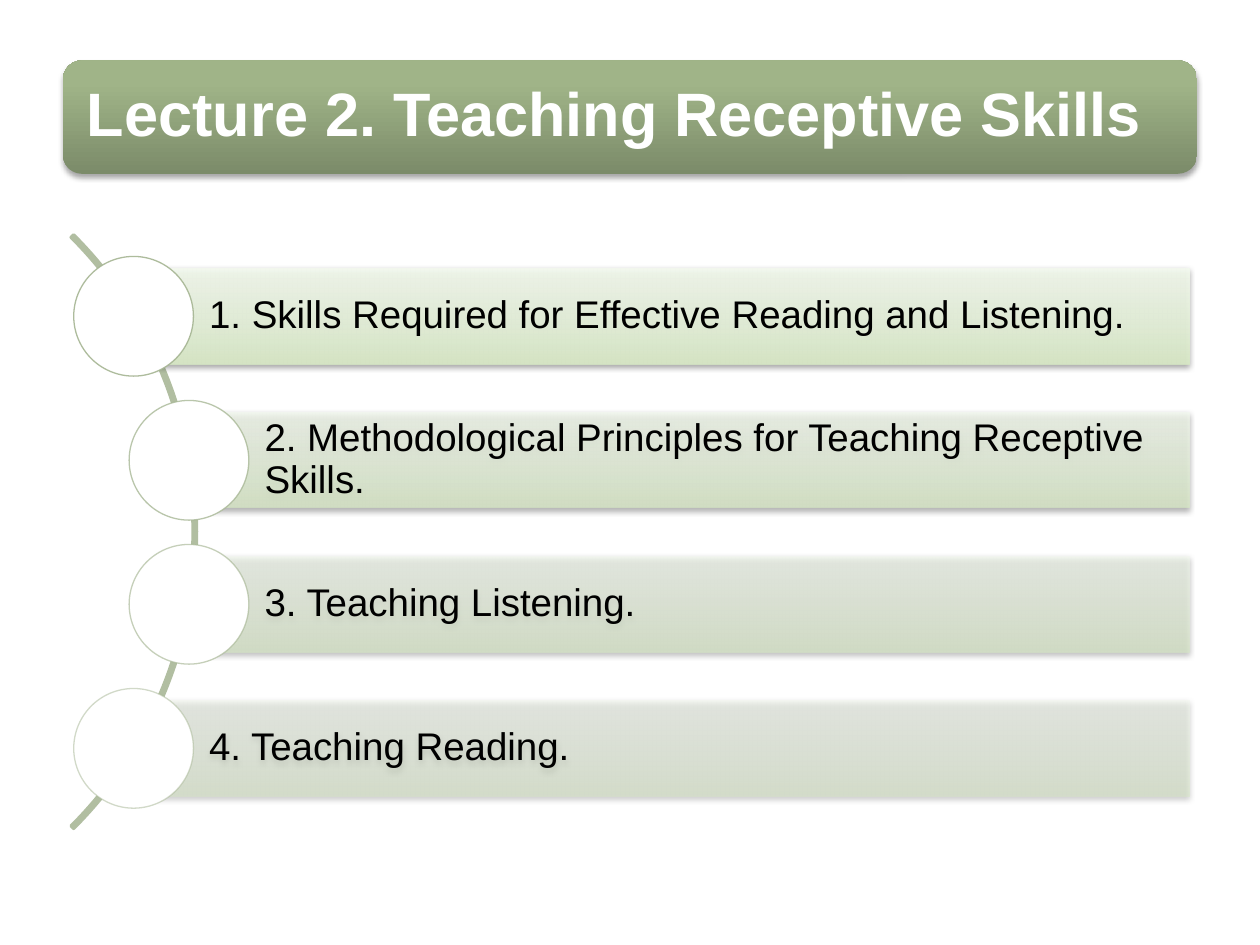
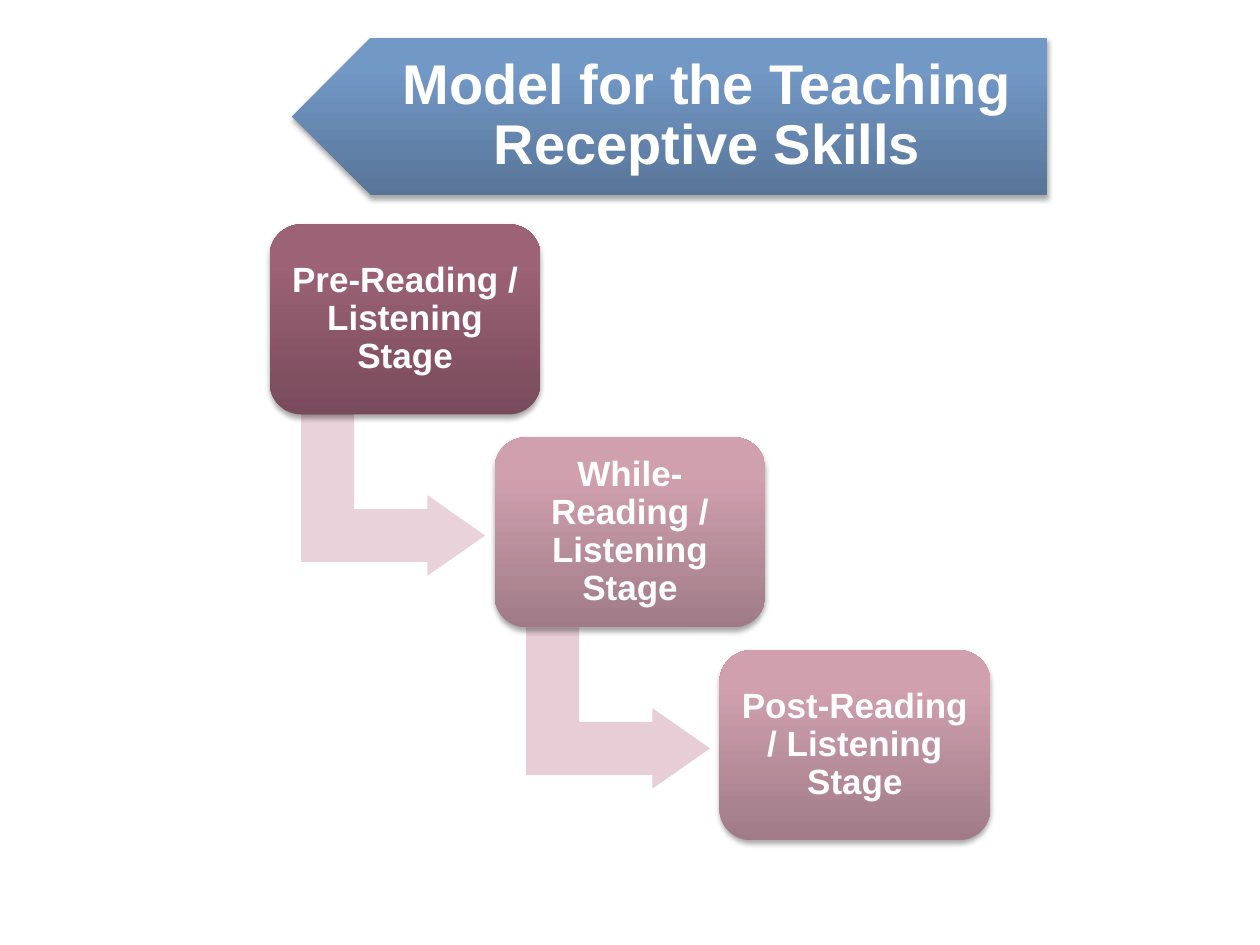
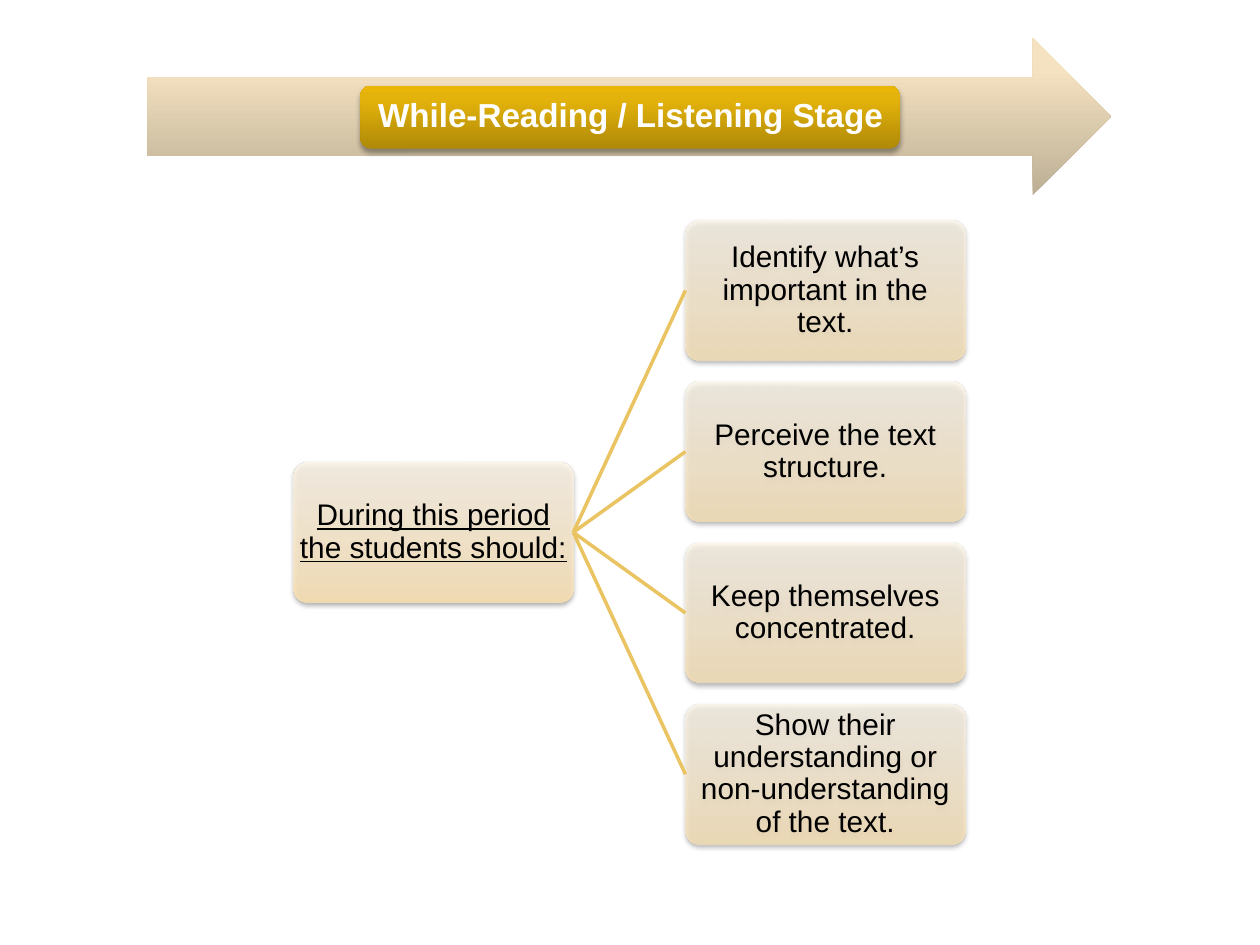
import lxml.etree
import pptx
import pptx.dml.color
import pptx.enum.shapes
import pptx.enum.text
import pptx.oxml
import pptx.oxml.ns
import pptx.util

Inches, Pt = pptx.util.Inches, pptx.util.Pt
RGB = pptx.dml.color.RGBColor.from_string
SHAPE = pptx.enum.shapes.MSO_SHAPE
ALIGN = pptx.enum.text.PP_ALIGN
TITLE_ONLY = 5


class Theme:
    font = "Arial"
    white, black = "FFFFFF", "000000"
    # Gradients run from bottom to top
    green = [(0, "7B8B69"), (80, "A0B488"), (100, "A1B688")]
    blue = [(0, "587598"), (80, "7298C6"), (100, "7199C8")]
    plum = [(0, "784B5B"), (80, "9C6276"), (100, "9E6176")]
    pink = [(0, "A07B87"), (80, "D0A0AF"), (100, "D2A0B0")]
    sand = [(0, "BCAE94"), (80, "F4E2C1"), (100, "F6E3C1")]
    gold = [(0, "B08A08"), (80, "E4B30B"), (100, "E9B607")]
    leaf = [(0, "D9EAC6"), (35, "E3F0D6"), (100, "F4FAEF")]
    cream = [(0, "FFE4B2"), (35, "FFECC9"), (100, "FFF7EA")]
    arc, ring, link = "B1BEA1", "A5B592", "EAC463"
    bends = ["E9D2D9", "E7CDD5"]
    # Shadow strength in percent, distance in points
    deep, soft = (35, 1.8), (38, 1.6)
    # Text styles
    head = {"size": Pt(35), "bold": True}
    model = {"size": Pt(32), "bold": True}
    label = {"size": Pt(19), "bold": True}
    stage = {"size": Pt(20), "bold": True}
    topic = {"size": Pt(22)}
    card = {"size": Pt(17)}
    lead = {"size": Pt(17), "underline": True}


def paint(shape, stops, shade=None, alpha=100):
    """Give a shape an upward gradient, no outline and an optional shadow."""
    space = pptx.oxml.ns.nsdecls("a")
    marks = "".join(
        f'<a:gs pos="{pos * 1000}"><a:srgbClr val="{tone}">'
        f'<a:alpha val="{alpha * 1000}"/></a:srgbClr></a:gs>'
        for pos, tone in stops)
    shape.shadow.inherit = False
    shape.line.fill.background()
    props = shape.element.spPr
    line = props.find(pptx.oxml.ns.qn("a:ln"))
    line.addprevious(pptx.oxml.parse_xml(
        f'<a:gradFill {space} rotWithShape="1"><a:gsLst>{marks}</a:gsLst>'
        '<a:lin ang="16200000" scaled="0"/></a:gradFill>'))
    if shade:
        power, gap = shade
        glow = props.find(pptx.oxml.ns.qn("a:effectLst"))
        glow.append(pptx.oxml.parse_xml(
            f'<a:outerShdw {space} blurRad="{Pt(3.1)}" dist="{Pt(gap)}" '
            'dir="5400000" rotWithShape="0"><a:srgbClr val="000000">'
            f'<a:alpha val="{power * 1000}"/></a:srgbClr></a:outerShdw>'))


def write(shape, text, look, tone, pads, align=ALIGN.CENTER):
    """Set one middle-anchored paragraph; pads are left, top, right, bottom."""
    frame = shape.text_frame
    frame.text = text
    sides = ("margin_left", "margin_top", "margin_right", "margin_bottom")
    form = dict(zip(sides, map(Inches, pads)), word_wrap=True,
                auto_size=pptx.enum.text.MSO_AUTO_SIZE.NONE,
                vertical_anchor=pptx.enum.text.MSO_ANCHOR.MIDDLE)
    para = frame.paragraphs[0]
    font = para.runs[0].font
    font.color.rgb = RGB(tone)
    for part, values in ((frame, form),
                         (para, {"alignment": align, "line_spacing": 0.9}),
                         (font, {"name": Theme.font, **look})):
        for key, value in values.items():
            setattr(part, key, value)


deck = pptx.Presentation()
deck.slide_width, deck.slide_height = Inches(10), Inches(7.5)

# Title banners: outline, box, gradient, shadow; then title text and its box
banners = [
    ([(SHAPE.ROUNDED_RECTANGLE, (0.5, 0.48, 9, 0.9), Theme.green, Theme.deep)],
     "Lecture 2. Teaching Receptive Skills", (0.54, 0.52, 8.91, 0.81),
     Theme.head, (0.15,) * 4, ALIGN.LEFT),
    ([(SHAPE.PENTAGON, (2.32, 0.3, 5.99, 1.25), Theme.blue, Theme.deep)],
     "Model for the Teaching Receptive Skills", (2.63, 0.3, 5.67, 1.25),
     Theme.model, (0.55, 0.13, 0.25, 0.13), ALIGN.CENTER),
    ([(SHAPE.RIGHT_ARROW, (1.17, 0.3, 7.65, 1.25), Theme.sand, None),
      (SHAPE.ROUNDED_RECTANGLE, (2.86, 0.68, 4.28, 0.5), Theme.gold, Theme.deep)],
     "While-Reading / Listening Stage", (2.89, 0.7, 4.23, 0.45),
     Theme.label, (0.08,) * 4, ALIGN.CENTER),
]
pages = []
for parts, text, box, look, pads, align in banners:
    slide = deck.slides.add_slide(deck.slide_layouts[TITLE_ONLY])
    for kind, area, stops, shade in parts:
        plate = slide.shapes.add_shape(kind, *map(Inches, area))
        paint(plate, stops, shade)
        if kind == SHAPE.PENTAGON:
            plate.element.spPr.xfrm.set("flipH", "1")
    title = slide.shapes.title
    for side, value in zip(("left", "top", "width", "height"), box):
        setattr(title, side, Inches(value))
    write(title, text, look, Theme.white, pads, align)
    title.element.getparent().append(title.element)
    pages.append(slide.shapes)
plan, model, tasks = pages

# Slide 1: arc behind the lecture topics
arc = plan.add_shape(SHAPE.BLOCK_ARC, *map(Inches, (-5.1, 0.89, 6.66, 6.66)))
for i, value in enumerate((189, 27, 0.004)):
    arc.adjustments[i] = value
arc.shadow.inherit = False
arc.fill.background()
arc.line.color.rgb = RGB(Theme.arc)
arc.line.width = Pt(2)

# Slide 1: topic bars, each with a circle centred on its left end
topics = [
    ("1. Skills Required for Effective Reading and Listening.", 1.06, 90),
    ("2. Methodological Principles for Teaching Receptive Skills.", 1.5, 77),
    ("3. Teaching Listening.", 1.5, 63),
    ("4. Teaching Reading.", 1.06, 50),
]
tall, disc = 0.76, 0.95
for i, (text, left, alpha) in enumerate(topics):
    top = 2.13 + i * 1.143
    bar = plan.add_shape(SHAPE.RECTANGLE, Inches(left), Inches(top),
                         Inches(9.44 - left), Inches(tall))
    paint(bar, Theme.leaf, Theme.soft, alpha)
    write(bar, text, Theme.topic, Theme.black, (0.6, 0.06, 0.06, 0.06), ALIGN.LEFT)
    dot = plan.add_shape(SHAPE.OVAL, Inches(left - disc / 2),
                         Inches(top + (tall - disc) / 2), Inches(disc), Inches(disc))
    dot.shadow.inherit = False
    dot.fill.solid()
    dot.fill.fore_color.rgb = RGB(Theme.white)
    dot.line.color.rgb = RGB(Theme.ring)
    dot.line.width = Pt(0.75)
    tone = dot.line._ln.find(".//" + pptx.oxml.ns.qn("a:srgbClr"))
    lxml.etree.SubElement(tone, pptx.oxml.ns.qn("a:alpha"), val=str(alpha * 1000))

# Slide 2: stages step down to the right, joined by bent arrows
stages = [
    ("Pre-Reading / Listening Stage", Theme.plum),
    ("While-Reading / Listening Stage", Theme.pink),
    ("Post-Reading / Listening Stage", Theme.pink),
]
for i, (text, stops) in enumerate(stages):
    left, top = 2.14 + i * 1.785, 1.78 + i * 1.69
    if i < len(Theme.bends):
        bend = model.add_shape(SHAPE.BENT_UP_ARROW, Inches(left + 0.34),
                               Inches(top + 1.42), Inches(1.28), Inches(1.46))
        bend.rotation = 90
        for j, value in enumerate((0.328, 0.25, 0.358)):
            bend.adjustments[j] = value
        bend.shadow.inherit = False
        bend.fill.solid()
        bend.fill.fore_color.rgb = RGB(Theme.bends[i])
        bend.line.fill.background()
    step = model.add_shape(SHAPE.ROUNDED_RECTANGLE, Inches(left), Inches(top),
                           Inches(2.15), Inches(1.51))
    paint(step, stops, Theme.deep)
    write(step, text, Theme.stage, Theme.white, (0.08,) * 4)

# Slide 3: lead card on the left, then the tasks it links to
cards = [("During this period the students should:", 2.33, 3.67, Theme.lead, 80)]
cards += [(text, 5.44, 1.75 + i * 1.28, Theme.card, 70) for i, text in enumerate((
    "Identify what’s important in the text.",
    "Perceive the text structure.",
    "Keep themselves concentrated.",
    "Show their understanding or non-understanding of the text."))]
root = None
for text, left, top, look, alpha in cards:
    card = tasks.add_shape(SHAPE.ROUNDED_RECTANGLE, Inches(left), Inches(top),
                           Inches(2.22), Inches(1.11))
    card.adjustments[0] = 0.1
    paint(card, Theme.cream, Theme.soft, alpha)
    write(card, text, look, Theme.black, (0.01,) * 4)
    if root is None:
        root = card
        continue
    link = tasks.add_connector(pptx.enum.shapes.MSO_CONNECTOR.STRAIGHT, 0, 0, 0, 0)
    link.begin_connect(root, 3)
    link.end_connect(card, 1)
    link.line.color.rgb = RGB(Theme.link)
    link.line.width = Pt(2)
    lxml.etree.SubElement(link.element.spPr, pptx.oxml.ns.qn("a:effectLst"))

deck.save("out.pptx")
